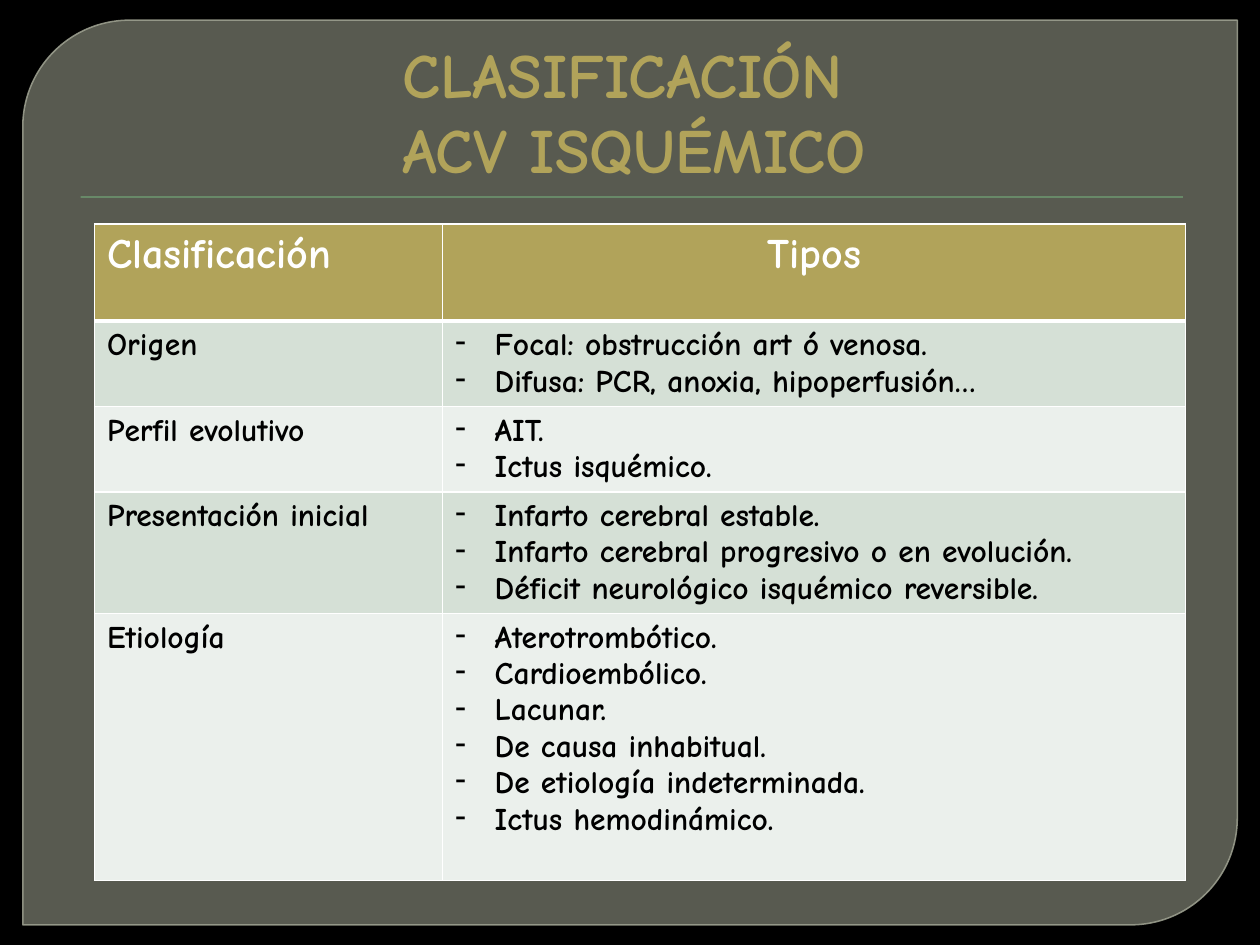
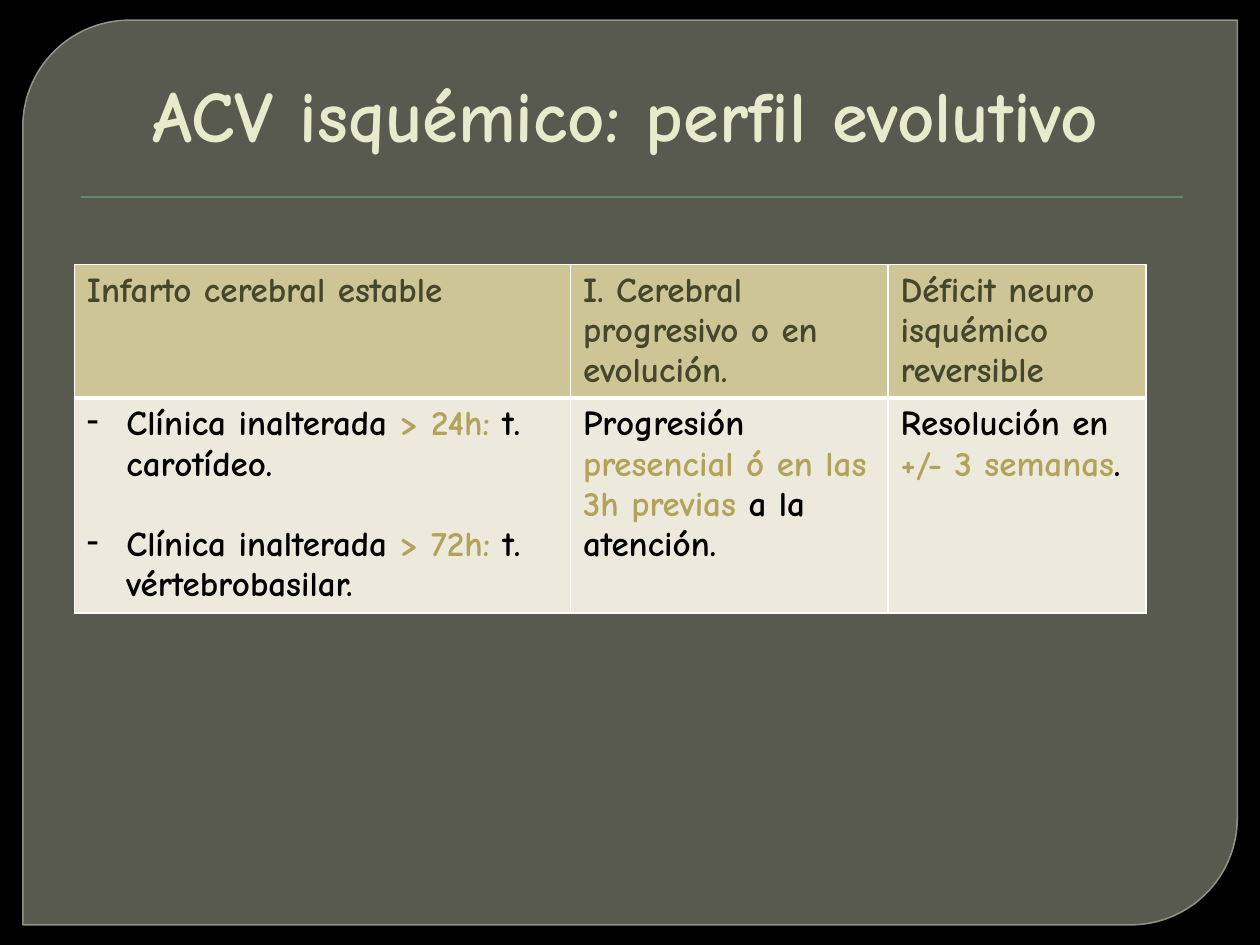
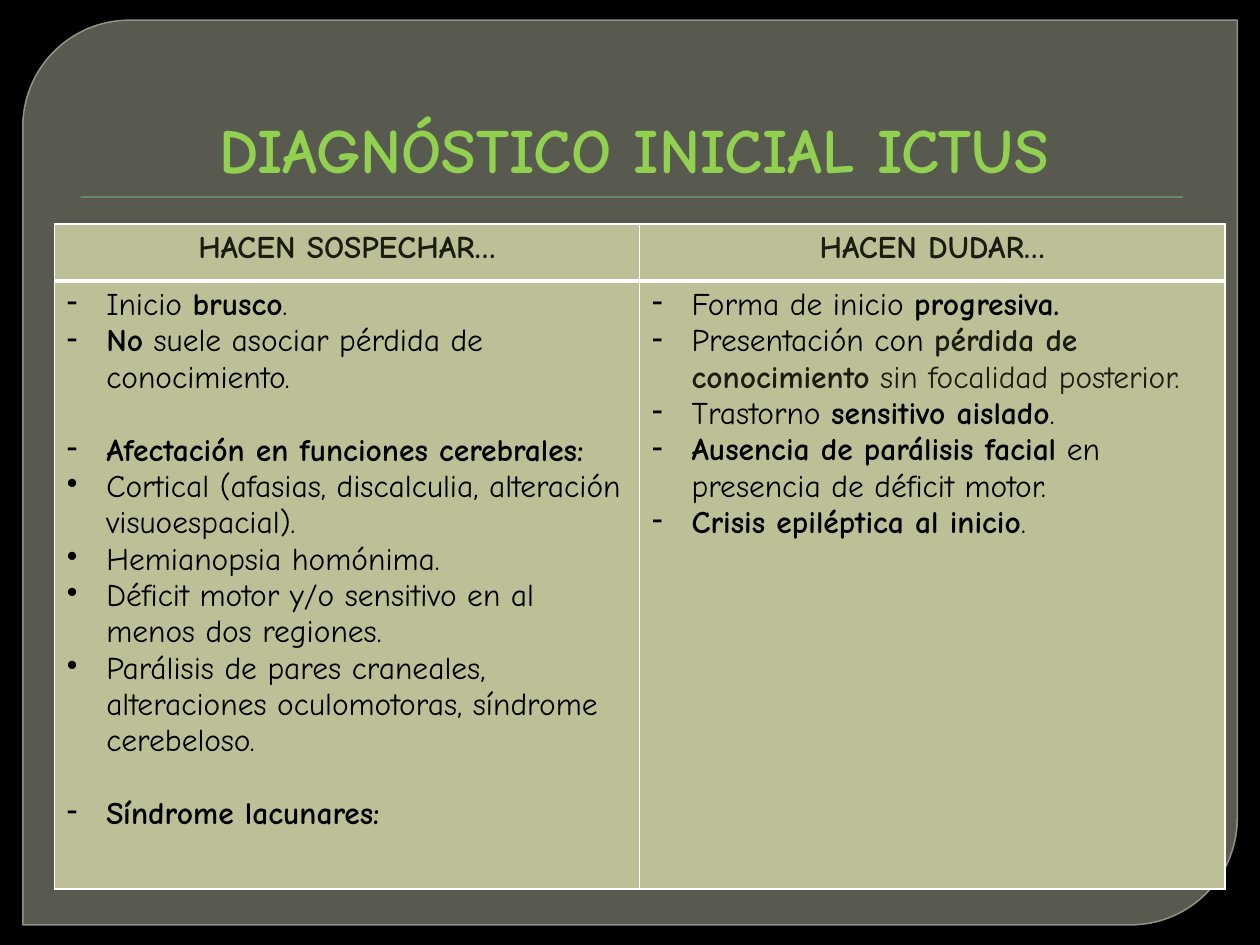
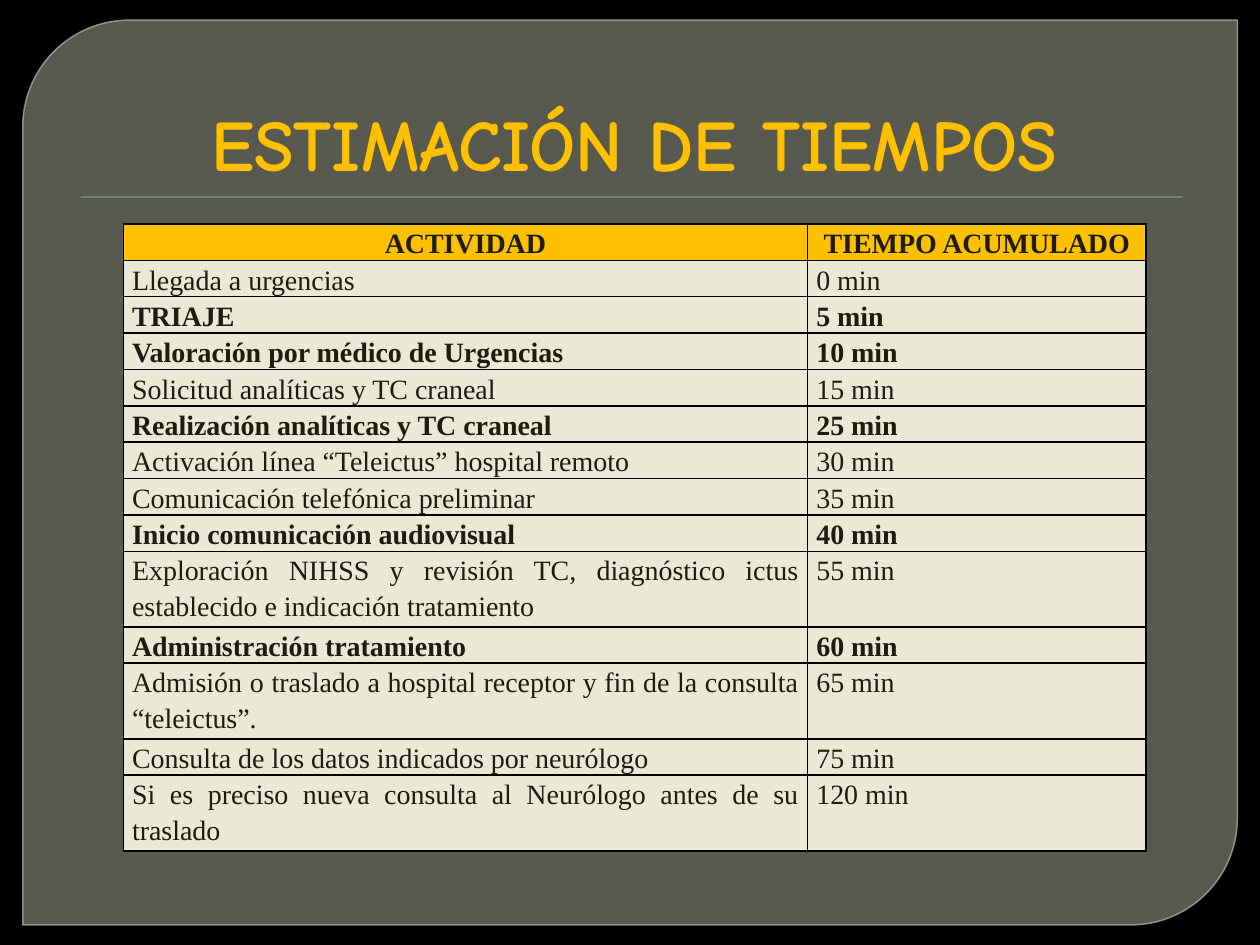
from dataclasses import dataclass, field
from typing import Any, Optional

from lxml import etree
from pptx import Presentation
from pptx.dml.color import RGBColor
from pptx.enum.shapes import MSO_SHAPE
from pptx.enum.text import MSO_ANCHOR, MSO_AUTO_SIZE, PP_ALIGN
from pptx.oxml import parse_xml
from pptx.oxml.ns import nsdecls, qn
from pptx.util import Pt

PANEL_SHAPE = MSO_SHAPE.ROUND_2_DIAG_RECTANGLE
RULE_SHAPE = MSO_SHAPE.RECTANGLE
LEFT, CENTER, JUSTIFY = PP_ALIGN.LEFT, PP_ALIGN.CENTER, PP_ALIGN.JUSTIFY
BOTTOM = MSO_ANCHOR.BOTTOM
FIXED_SIZE = MSO_AUTO_SIZE.NONE

BLACK = RGBColor(0x00, 0x00, 0x00)
WHITE = RGBColor(0xFF, 0xFF, 0xFF)
INK = RGBColor(0x1C, 0x1C, 0x11)
PANEL_GREY = RGBColor(0x88, 0x8B, 0x7B)
PANEL_EDGE = RGBColor(0x9D, 0xA0, 0x90)
RULE_GREEN = RGBColor(0x72, 0xA3, 0x76)
GOLD = RGBColor(0xB1, 0xA3, 0x5A)
PALE_GOLD = RGBColor(0xCE, 0xC5, 0x97)
CREAM = RGBColor(0xED, 0xEA, 0xDD)
PALE_CREAM = RGBColor(0xEB, 0xE8, 0xD5)
MINT = RGBColor(0xD5, 0xE0, 0xD6)
PALE_MINT = RGBColor(0xEB, 0xF0, 0xEC)
SAGE = RGBColor(0xBD, 0xC0, 0x97)
IVORY = RGBColor(0xE7, 0xEA, 0xCB)
OLIVE = RGBColor(0x45, 0x47, 0x2B)
LIME = RGBColor(0x92, 0xD0, 0x50)
AMBER = RGBColor(0xFF, 0xC0, 0x00)

COMIC = "Comic Neue"
TIMES = "Times New Roman"
BULLET_INDENT = Pt(22.5)


@dataclass(frozen=True)
class TextStyle:
    size: float
    color: RGBColor
    bold: bool = True
    font: str = COMIC
    align: Any = LEFT
    line_spacing: Optional[float] = None


@dataclass(frozen=True)
class Item:
    """A paragraph; parts between asterisks are emphasised."""
    text: str
    bullet: str = ""
    gap: float = 0
    tail: Optional[RGBColor] = None  # colour from the first emphasis on
    style: Optional[TextStyle] = None
    align: Any = None


@dataclass(frozen=True)
class Title:
    text: str
    size: float
    color: RGBColor
    box: tuple[float, float, float, float] = (36, 20, 648, 90)


@dataclass(frozen=True)
class TableSpec:
    left: float
    top: float
    columns: list[float]
    heights: list[float]
    header: list[Item]
    body: list[list[list[Item]]]
    header_style: TextStyle
    body_style: TextStyle
    header_fill: RGBColor
    body_fills: list[RGBColor]
    emphasis: dict[str, Any] = field(default_factory=dict)
    border: RGBColor = WHITE
    header_rule: float = 3
    insets: tuple[float, float] = (7.2, 3.6)


def dashes(*texts: str) -> list[Item]:
    return [Item(text, "-") for text in texts]


def set_alpha(fill_parent: Any, percent: int) -> None:
    color = next(fill_parent.iter(qn("a:srgbClr")))
    etree.SubElement(color, qn("a:alpha")).set("val", str(percent * 1000))


def format_run(run: Any, style: TextStyle, extra: dict[str, Any]) -> None:
    values = {"size": Pt(style.size), "name": style.font, "bold": style.bold,
              "color": style.color, **extra}
    run.font.color.rgb = values.pop("color")
    for name, value in values.items():
        setattr(run.font, name, value)


def write_item(paragraph: Any, item: Item, base: TextStyle, emphasis: dict[str, Any]) -> None:
    style = item.style or base
    paragraph.alignment = item.align or style.align
    if style.line_spacing:
        paragraph.line_spacing = style.line_spacing
    if item.gap:
        paragraph.space_before = Pt(item.gap)
    if item.bullet:
        properties = paragraph._p.get_or_add_pPr()
        properties.set("marL", str(BULLET_INDENT))
        properties.set("indent", str(-BULLET_INDENT))
        etree.SubElement(properties, qn("a:buChar")).set("char", item.bullet)
    for index, part in enumerate(item.text.split("*")):
        if part:
            run = paragraph.add_run()
            run.text = part
            extra = dict(emphasis) if index % 2 else {}
            if item.tail and index:
                extra["color"] = item.tail
            format_run(run, style, extra)


def draw_frame(slide: Any) -> None:
    """Rounded panel and the rule below the title."""
    panel = slide.shapes.add_shape(PANEL_SHAPE, Pt(13), Pt(11.5), Pt(694), Pt(517))
    panel.adjustments[0], panel.adjustments[1] = 0.118, 0
    panel.shadow.inherit = False
    panel.fill.solid()
    panel.fill.fore_color.rgb = PANEL_GREY
    panel.line.color.rgb = PANEL_EDGE
    panel.line.width = Pt(0.87)
    set_alpha(panel._element.spPr.find(qn("a:solidFill")), 65)
    set_alpha(panel._element.spPr.find(qn("a:ln")), 88)

    rule = slide.shapes.add_shape(RULE_SHAPE, Pt(46), Pt(112.2), Pt(630), Pt(0.7))
    rule.fill.solid()
    rule.fill.fore_color.rgb = RULE_GREEN
    rule.line.fill.background()
    rule._element.spPr.append(parse_xml(
        f'<a:effectLst {nsdecls("a")}><a:outerShdw blurRad="{Pt(1)}" dist="{Pt(1)}" '
        f'dir="5400000"><a:srgbClr val="{BLACK}"><a:alpha val="75000"/></a:srgbClr>'
        '</a:outerShdw></a:effectLst>'))


def draw_title(slide: Any, title: Title) -> None:
    frame = slide.shapes.add_textbox(*map(Pt, title.box)).text_frame
    settings = {"word_wrap": True, "auto_size": FIXED_SIZE, "vertical_anchor": BOTTOM}
    for name, value in settings.items():
        setattr(frame, name, value)
    heading = frame.paragraphs[0]
    heading.text = title.text
    heading.alignment = CENTER
    heading._p.get_or_add_pPr().set("marL", str(Pt(4.5)))
    for run in heading.runs:
        format_run(run, TextStyle(title.size, title.color), {})


def draw_borders(cell: Any, color: RGBColor, top: float, bottom: float) -> None:
    properties = cell._tc.get_or_add_tcPr()
    for side, width in {"L": 1, "R": 1, "T": top, "B": bottom}.items():
        properties.append(parse_xml(
            f'<a:ln{side} {nsdecls("a")} w="{Pt(width)}"><a:solidFill>'
            f'<a:srgbClr val="{color}"/></a:solidFill></a:ln{side}>'))


def draw_table(slide: Any, spec: TableSpec) -> None:
    rows = [[[item] for item in spec.header], *spec.body]
    table = slide.shapes.add_table(
        len(rows), len(spec.columns), Pt(spec.left), Pt(spec.top),
        Pt(sum(spec.columns)), Pt(sum(spec.heights))).table
    table.first_row = table.horz_banding = False
    for column, width in zip(table.columns, spec.columns):
        column.width = Pt(width)
    side, edge = map(Pt, spec.insets)
    margins = {"margin_left": side, "margin_right": side,
               "margin_top": edge, "margin_bottom": edge}
    for r, contents in enumerate(rows):
        table.rows[r].height = Pt(spec.heights[r])
        is_header = r == 0
        style = spec.header_style if is_header else spec.body_style
        fill = spec.header_fill if is_header else spec.body_fills[(r - 1) % len(spec.body_fills)]
        for c, items in enumerate(contents):
            cell = table.cell(r, c)
            for name, value in margins.items():
                setattr(cell, name, value)
            draw_borders(cell, spec.border, spec.header_rule if r == 1 else 1,
                         spec.header_rule if is_header else 1)
            cell.fill.solid()
            cell.fill.fore_color.rgb = fill
            frame = cell.text_frame
            for n, item in enumerate(items):
                paragraph = frame.add_paragraph() if n else frame.paragraphs[0]
                write_item(paragraph, item, style, spec.emphasis)


# Slide 1: classification
CLASSIFICATION = TableSpec(
    left=54, top=128, columns=[199, 424.5], heights=[55.5, 48.5, 48.5, 69.5, 152.5],
    header=[Item("Clasificación"), Item("Tipos", align=CENTER)],
    body=[
        [[Item("Origen")],
         dashes("Focal: obstrucción art ó venosa.",
                "Difusa: PCR, anoxia, hipoperfusión…")],
        [[Item("Perfil evolutivo")], dashes("AIT.", "Ictus isquémico.")],
        [[Item("Presentación inicial")],
         dashes("Infarto cerebral estable.",
                "Infarto cerebral progresivo o en evolución.",
                "Déficit neurológico isquémico reversible.")],
        [[Item("Etiología")],
         dashes("Aterotrombótico.", "Cardioembólico.", "Lacunar.", "De causa inhabitual.",
                "De etiología indeterminada.", "Ictus hemodinámico.")],
    ],
    header_style=TextStyle(24, WHITE), body_style=TextStyle(18, BLACK),
    header_fill=GOLD, body_fills=[MINT, PALE_MINT])

# Slide 2: evolution profile
EVOLUTION = TableSpec(
    left=42.5, top=151, columns=[283.5, 181.5, 147.5], heights=[76, 123],
    header=[Item("Infarto cerebral estable"),
            Item("I. Cerebral progresivo o en evolución."),
            Item("Déficit neuro isquémico reversible")],
    body=[[
        [Item("Clínica inalterada *> 24h: *t. carotídeo.", "-"),
         Item("Clínica inalterada *> 72h: *t. vértebrobasilar.", "-", gap=23)],
        [Item("Progresión *presencial ó en las 3h previas *a la atención.")],
        [Item("Resolución en *+/- 3 semanas*.")],
    ]],
    header_style=TextStyle(20, OLIVE), body_style=TextStyle(20, BLACK),
    header_fill=PALE_GOLD, body_fills=[CREAM], emphasis={"color": GOLD})

# Slide 3: signs for and against a stroke
DIAGNOSIS = TableSpec(
    left=31, top=128, columns=[334.5, 334.5], heights=[32.5, 347.5],
    header=[Item("HACEN SOSPECHAR…"), Item("HACEN DUDAR…")],
    body=[[
        [Item("Inicio *brusco*.", "-"),
         Item("*No* suele asociar pérdida de conocimiento.", "-"),
         Item("*Afectación en funciones cerebrales:*", "-", gap=20.8),
         Item("Cortical (afasias, discalculia, alteración visuoespacial).", "•"),
         Item("Hemianopsia homónima.", "•"),
         Item("Déficit motor y/o sensitivo en al menos dos regiones.", "•"),
         Item("Parálisis de pares craneales, alteraciones oculomotoras, "
              "síndrome cerebeloso.", "•"),
         Item("*Síndrome lacunares:*", "-", gap=20.8)],
        [Item("Forma de inicio *progresiva.*", "-"),
         Item("Presentación con *pérdida de conocimiento* sin focalidad posterior.",
              "-", tail=INK),
         Item("Trastorno *sensitivo aislado*.", "-"),
         Item("*Ausencia de parálisis facial* en presencia de déficit motor.", "-"),
         Item("*Crisis epiléptica al inicio*.", "-")],
    ]],
    header_style=TextStyle(18, INK, align=CENTER),
    body_style=TextStyle(18, BLACK, bold=False),
    header_fill=SAGE, body_fills=[SAGE], emphasis={"bold": True})

# Slide 4: accumulated times; asterisks mark the key steps
STEPS = [
    ("Llegada a urgencias", "0 min"),
    ("*TRIAJE*", "*5 min*"),
    ("*Valoración por médico de Urgencias*", "*10 min*"),
    ("Solicitud analíticas y TC craneal", "15 min"),
    ("*Realización analíticas y TC craneal*", "*25 min*"),
    ("Activación línea “Teleictus” hospital remoto", "30 min"),
    ("Comunicación telefónica preliminar", "35 min"),
    ("*Inicio comunicación audiovisual*", "*40 min*"),
    ("Exploración NIHSS y revisión TC, diagnóstico ictus establecido "
     "e indicación tratamiento", "55 min"),
    ("*Administración tratamiento*", "*60 min*"),
    ("Admisión o traslado a hospital receptor y fin de la consulta “teleictus”.", "65 min"),
    ("Consulta de los datos indicados por neurólogo", "75 min"),
    ("Si es preciso nueva consulta al Neurólogo antes de su traslado", "120 min"),
]
ONE_LINE, TWO_LINES, LINE_CHARACTERS = 20.8, 43.2, 55
TIMES_TABLE = TableSpec(
    left=70.5, top=128, columns=[391, 193.5],
    heights=[ONE_LINE] + [TWO_LINES if len(activity) > LINE_CHARACTERS else ONE_LINE
                          for activity, _ in STEPS],
    header=[Item("ACTIVIDAD"), Item("TIEMPO ACUMULADO")],
    body=[[[Item(text)] for text in step] for step in STEPS],
    header_style=TextStyle(16, INK, True, TIMES, CENTER, 1.15),
    body_style=TextStyle(16, INK, False, TIMES, JUSTIFY, 1.15),
    header_fill=AMBER, body_fills=[PALE_CREAM], emphasis={"bold": True},
    border=BLACK, header_rule=1, insets=(5, 0))

SLIDES = [
    (Title("CLASIFICACIÓN \vACV ISQUÉMICO", 36, GOLD), CLASSIFICATION),
    (Title("ACV isquémico: perfil evolutivo", 41.4, IVORY, (31, 26, 648, 67)), EVOLUTION),
    (Title("DIAGNÓSTICO INICIAL ICTUS", 36, LIME), DIAGNOSIS),
    (Title("ESTIMACIÓN DE TIEMPOS", 41.4, AMBER), TIMES_TABLE),
]


def main() -> None:
    deck = Presentation()
    deck.slide_width, deck.slide_height = Pt(720), Pt(540)
    blank = deck.slide_layouts[6]
    for title, table in SLIDES:
        slide = deck.slides.add_slide(blank)
        slide.background.fill.solid()
        slide.background.fill.fore_color.rgb = BLACK
        draw_frame(slide)
        draw_title(slide, title)
        draw_table(slide, table)
    deck.save("out.pptx")


if __name__ == "__main__":
    main()
